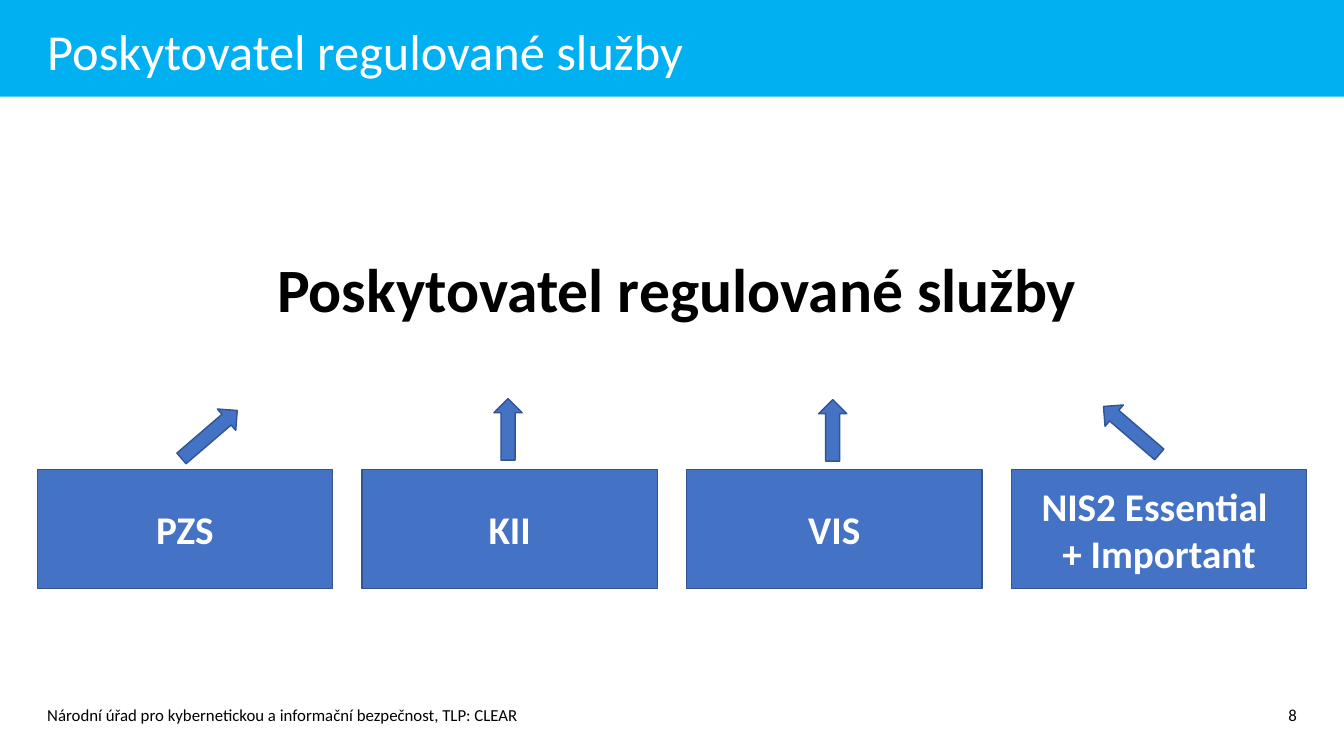
from pptx import Presentation
from pptx.dml.color import RGBColor
from pptx.enum.shapes import MSO_SHAPE
from pptx.enum.text import MSO_ANCHOR, PP_ALIGN
from pptx.util import Inches, Pt

COLORS = {"band": "00B0F0", "block": "4472C4", "edge": "325491",
          "light": "FFFFFF", "dark": "000000"}
WIDTH, HEIGHT = 13.33, 7.5
MARGIN, GUTTER, COLUMNS, ROWS = 0.37, 0.29, 4, 15
PITCH = (WIDTH - 2 * MARGIN + GUTTER) / COLUMNS


def column(number):
    return Inches(MARGIN + number * PITCH)


def columns(count):
    return Inches(count * PITCH - GUTTER)


def rows(count):
    return Inches(count * HEIGHT / ROWS)


class SlidePainter:
    """Draws styled elements on one slide, placed by columns and rows."""

    def __init__(self, page, font="Calibri"):
        self.page = page
        self.font = font

    def label(self, shape, text, size, color, bold=False, align=PP_ALIGN.LEFT):
        frame = shape.text_frame
        frame.word_wrap = True
        frame.vertical_anchor = MSO_ANCHOR.MIDDLE
        frame.text = text
        para = frame.paragraphs[0]
        para.alignment = align
        para.font.name = self.font
        para.font.size = Pt(size)
        para.font.bold = bold
        para.font.color.rgb = RGBColor.from_string(COLORS[color])

    def text(self, text, start, top, width, height, size, color="dark", **style):
        box = self.page.shapes.add_textbox(column(start), rows(top), columns(width), rows(height))
        self.label(box, text, size, color, **style)
        return box

    def shape(self, kind, left, top, width, height, fill, edge=None):
        shape = self.page.shapes.add_shape(kind, left, top, width, height)
        shape.shadow.inherit = False
        shape.fill.solid()
        shape.fill.fore_color.rgb = RGBColor.from_string(COLORS[fill])
        if edge:
            shape.line.color.rgb = RGBColor.from_string(COLORS[edge])
            shape.line.width = Pt(1)
        else:
            shape.line.fill.background()
        return shape

    def band(self, height):
        self.shape(MSO_SHAPE.RECTANGLE, 0, 0, Inches(WIDTH), rows(height), "band")

    def block(self, text, number):
        block = self.shape(MSO_SHAPE.RECTANGLE, column(number), rows(9.32), columns(1),
                           rows(2.36), "block", "edge")
        self.label(block, text, 28, "light", bold=True, align=PP_ALIGN.CENTER)

    def arrow(self, center, middle, length, angle):
        width, height = rows(length), rows(0.56)
        arrow = self.shape(MSO_SHAPE.RIGHT_ARROW, column(center) - width // 2,
                           rows(middle) - height // 2, width, height, "block", "edge")
        arrow.rotation = angle


def main():
    deck = Presentation()
    deck.slide_width, deck.slide_height = Inches(WIDTH), Inches(HEIGHT)
    painter = SlidePainter(deck.slides.add_slide(deck.slide_layouts[6]))
    title = "Poskytovatel regulované služby"

    painter.band(1.92)
    painter.text(title, 0, 0.32, 3.76, 1.34, 36, "light")
    headline = painter.text(title, 0, 4.72, 4, 2, 44, bold=True, align=PP_ALIGN.CENTER)
    headline.text_frame.margin_left = Inches(0.2)

    for number, name in enumerate(["PZS", "KII", "VIS", "NIS2 Essential \v+ Important"]):
        painter.block(name, number)

    for center, middle, length, angle in [(0.53, 8.62, 1.46, 319.3), (1.45, 8.52, 1.22, 270),
                                          (2.45, 8.54, 1.22, 270), (3.37, 8.54, 1.46, 220.7)]:
        painter.arrow(center, middle, length, angle)

    painter.text("Národní úřad pro kybernetickou a informační bezpečnost, TLP: CLEAR",
                 0, 13.66, 3.6, 1.04, 12)
    painter.text("8", 3.61, 13.66, 0.39, 1.04, 12, align=PP_ALIGN.RIGHT)
    deck.save("out.pptx")


if __name__ == "__main__":
    main()
